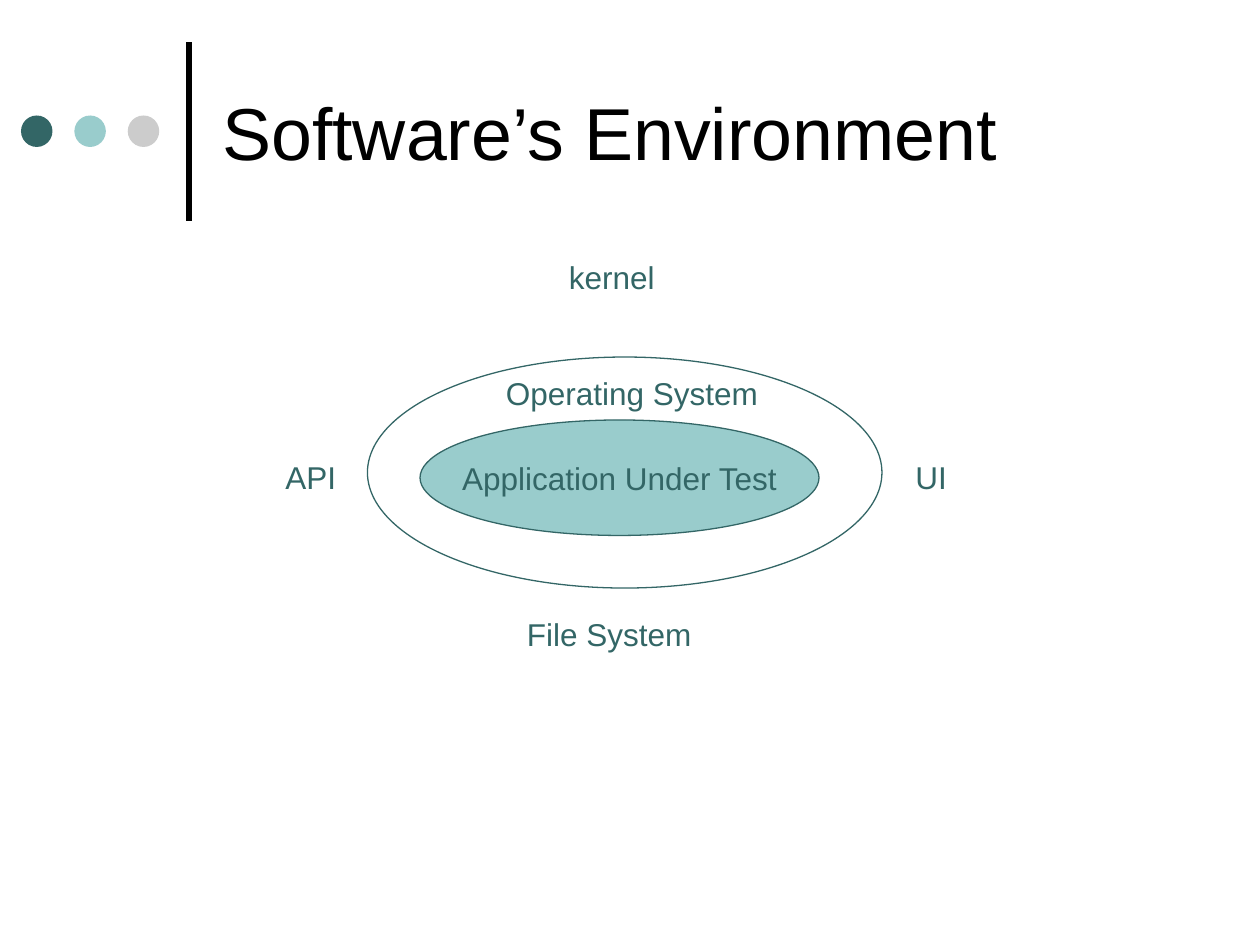
from lxml.etree import SubElement
from pptx import Presentation
from pptx.dml.color import RGBColor
from pptx.enum.shapes import MSO_CONNECTOR, MSO_SHAPE
from pptx.enum.text import MSO_ANCHOR, MSO_AUTO_SIZE, PP_ALIGN
from pptx.oxml.ns import qn
from pptx.util import Pt

COLORS = {"black": "000000", "teal": "336666", "aqua": "99CCCC", "gray": "CCCCCC"}
FONT = "Arial"


def color(name):
    return RGBColor.from_string(COLORS[name])


def write_text(shape, text, size=18, ink="teal", align=PP_ALIGN.LEFT,
               anchor=MSO_ANCHOR.TOP, wrap=False, fit=MSO_AUTO_SIZE.NONE):
    frame = shape.text_frame
    frame.word_wrap = wrap
    frame.auto_size = fit
    frame.vertical_anchor = anchor
    paragraph = frame.paragraphs[0]
    paragraph.alignment = align
    run = paragraph.add_run()
    run.text = text
    run.font.name = FONT
    run.font.size = Pt(size)
    run.font.color.rgb = color(ink)


def add_text_box(slide, left, top, width, height, text, **text_format):
    shape = slide.shapes.add_textbox(Pt(left), Pt(top), Pt(width), Pt(height))
    write_text(shape, text, **text_format)


def add_ellipse(slide, left, top, width, height, fill=None, line=None):
    shape = slide.shapes.add_shape(
        MSO_SHAPE.OVAL, Pt(left), Pt(top), Pt(width), Pt(height))
    shape.shadow.inherit = False
    if fill:
        shape.fill.solid()
        shape.fill.fore_color.rgb = color(fill)
    else:
        shape.fill.background()
    if line:
        shape.line.color.rgb = color(line)
        shape.line.width = Pt(0.75)
    else:
        shape.line.fill.background()
    return shape


def add_header(slide, left, top, width, height):
    # Vertical rule
    rule_x = left + 96
    rule = slide.shapes.add_connector(
        MSO_CONNECTOR.STRAIGHT, Pt(rule_x), Pt(top + height - 9),
        Pt(rule_x), Pt(top + 9))
    rule.line.color.rgb = color("black")
    rule.line.width = Pt(3)
    SubElement(rule._element.spPr, qn("a:effectLst"))

    # Row of dots
    for index, fill in enumerate(("teal", "aqua", "gray")):
        add_ellipse(slide, left + index * 30.5, top + 51, 18, 18, fill=fill)

    # Title
    add_text_box(slide, left + 108, top, width - 108, height,
                 "Software’s Environment", size=42, ink="black",
                 anchor=MSO_ANCHOR.MIDDLE, wrap=True)


def add_environment_diagram(slide, left, top):
    # Application at the centre
    application = add_ellipse(slide, left + 84, top + 96, 228, 66,
                              fill="aqua", line="teal")
    write_text(application, "Application Under Test", align=PP_ALIGN.CENTER,
               anchor=MSO_ANCHOR.MIDDLE)

    # Labels of the surroundings: text, offset from the box, width
    labels = (
        ("kernel", 162, 0, 64),
        ("File System", 138, 204, 109),
        ("UI", 360, 114, 33),
        ("API", 0, 114, 44),
        ("Operating System", 126, 66, 159),
    )
    for text, x, y, width in labels:
        add_text_box(slide, left + x, top + y, width, 29, text,
                     fit=MSO_AUTO_SIZE.SHAPE_TO_FIT_TEXT)

    # Operating system boundary
    add_ellipse(slide, left + 54, top + 60, 294, 132, line="teal")


def main():
    presentation = Presentation()
    presentation.slide_width = Pt(720)
    presentation.slide_height = Pt(540)
    slide = presentation.slides.add_slide(presentation.slide_layouts[6])
    add_header(slide, 12, 15, 660, 120)
    add_environment_diagram(slide, 156, 144)
    presentation.save("out.pptx")


if __name__ == "__main__":
    main()
